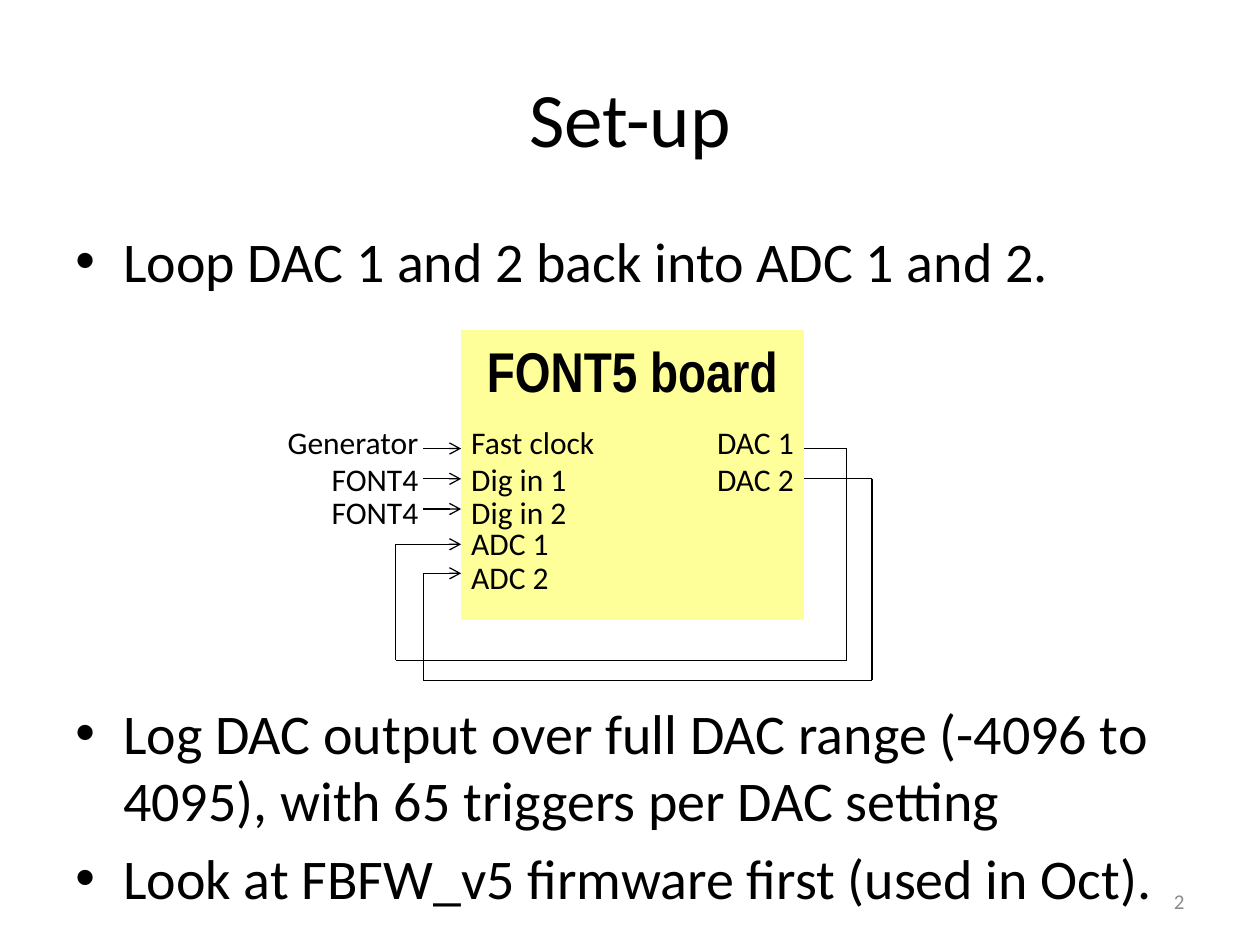
"""Build the set-up slide with a board whose two DAC outputs loop back to its ADC inputs."""
import itertools
from dataclasses import dataclass

import lxml.etree
import pptx
import pptx.dml.color
import pptx.enum.shapes
import pptx.enum.text
import pptx.oxml.ns
import pptx.util

Inches = pptx.util.Inches
Pt = pptx.util.Pt
qn = pptx.oxml.ns.qn
ALIGN = pptx.enum.text.PP_ALIGN
ANCHOR = pptx.enum.text.MSO_ANCHOR


@dataclass(frozen=True)
class Theme:
    """Fonts, colours and type sizes of the slide."""
    font: str = "Calibri"
    board_font: str = "Arial Narrow"
    ink: str = "000000"
    muted: str = "8C8C8C"
    board: str = "FFFF99"
    title: int = 44
    body: int = 32
    label: int = 18
    number: int = 12
    wire: float = 0.75


def rgb(value):
    """Turn a hex string into a colour."""
    return pptx.dml.color.RGBColor.from_string(value)


def apply(target, formats):
    """Set every attribute named in a dict."""
    for name, value in formats.items():
        setattr(target, name, value)


class SlideBuilder:
    """Hold the theme and the current slide, and draw each kind of element."""

    def __init__(self, slide, theme):
        """Keep the slide and theme."""
        self.slide = slide
        self.theme = theme

    def run(self, p, text, size, **font):
        """Add one styled run to a paragraph."""
        r = p.add_run()
        r.text = text
        color = font.pop("color", self.theme.ink)
        apply(r.font, {"name": self.theme.font, "size": Pt(size), **font})
        r.font.color.rgb = rgb(color)

    def text(self, box, text, size, align=ALIGN.LEFT, frame=None, **font):
        """Add a text box with one paragraph."""
        sp = self.slide.shapes.add_textbox(*map(Inches, box))
        tf = sp.text_frame
        apply(tf, {"word_wrap": True, **(frame or {})})
        p = tf.paragraphs[0]
        p.alignment = align
        self.run(p, text, size, **font)

    def label(self, left, top, width, text, align=ALIGN.LEFT):
        """Add a pin or source label."""
        insets = {"margin_left": Inches(0.08), "margin_right": Inches(0.08),
                  "margin_top": Inches(0.03), "margin_bottom": 0}
        self.text((left, top, width, 0.33), text, self.theme.label, align, insets)

    def board(self, box, text):
        """Add the filled board with its name at the top."""
        sp = self.slide.shapes.add_shape(
            pptx.enum.shapes.MSO_SHAPE.RECTANGLE, *map(Inches, box))
        sp.shadow.inherit = False
        sp.fill.solid()
        sp.fill.fore_color.rgb = rgb(self.theme.board)
        sp.line.fill.background()
        tf = sp.text_frame
        apply(tf, {"word_wrap": False, "vertical_anchor": ANCHOR.TOP})
        p = tf.paragraphs[0]
        p.alignment = ALIGN.CENTER
        self.run(p, text, self.theme.body, name=self.theme.board_font, bold=True)

    def wire(self, *points):
        """Join points with straight lines and put an arrowhead on the last."""
        for start, end in itertools.pairwise(points):
            line = self.slide.shapes.add_connector(
                pptx.enum.shapes.MSO_CONNECTOR.STRAIGHT, *map(Inches, start + end))
            line.line.color.rgb = rgb(self.theme.ink)
            line.line.width = Pt(self.theme.wire)
            sp_pr = line._element.spPr
            if end == points[-1]:
                lxml.etree.SubElement(sp_pr.find(qn("a:ln")), qn("a:tailEnd"), type="arrow")
            lxml.etree.SubElement(sp_pr, qn("a:effectLst"))

    def bullets(self, box, items):
        """Add bullets from pairs of text and space before in points."""
        sp = self.slide.shapes.add_textbox(*map(Inches, box))
        tf = sp.text_frame
        tf.word_wrap = True
        for i, (text, space) in enumerate(items):
            p = tf.add_paragraph() if i else tf.paragraphs[0]
            p.space_before = Pt(space)
            p_pr = p._p.get_or_add_pPr()
            p_pr.set("marL", str(Inches(0.38)))
            p_pr.set("indent", str(-Inches(0.38)))
            lxml.etree.SubElement(p_pr, qn("a:buFont"), typeface="Arial")
            lxml.etree.SubElement(p_pr, qn("a:buChar"), char="•")
            self.run(p, text, self.theme.body)


def main():
    """Create the presentation and save it."""
    prs = pptx.Presentation()
    prs.slide_width, prs.slide_height = Inches(10), Inches(7.5)
    theme = Theme()
    s = SlideBuilder(prs.slides.add_slide(prs.slide_layouts[6]), theme)
    middle = {"vertical_anchor": ANCHOR.MIDDLE}

    s.text((0.5, 0.3, 9, 1.25), "Set-up", theme.title, ALIGN.CENTER, middle)

    left, width = 3.66, 2.72
    right = left + width
    s.board((left, 2.62, width, 2.3), "FONT5 board")

    rows = [3.33, 3.62, 3.88, 4.13, 4.4]
    pins = ["Fast clock", "Dig in 1", "Dig in 2", "ADC 1", "ADC 2"]
    for top, pin in zip(rows, pins):
        s.label(left, top, 1.78, pin)
    for top, pin in zip(rows, ["DAC 1", "DAC 2"]):
        s.label(right - 1.78, top, 1.78, pin, ALIGN.RIGHT)
    for top, source in zip(rows, ["Generator", "FONT4", "FONT4"]):
        s.label(2.09, top, 1.31, source, ALIGN.RIGHT)

    for y in (3.56, 3.8, 4.04):
        s.wire((left - 0.3, y), (left, y))
    loops = [(3.56, 6.72, 5.24, 3.14, 4.32), (3.8, 6.92, 5.4, 3.36, 4.55)]
    for dac, outer, bottom, inner, adc in loops:
        s.wire((right, dac), (outer, dac), (outer, bottom),
               (inner, bottom), (inner, adc), (left, adc))

    s.bullets((0.5, 1.75, 9, 5.75), [
        ("Loop DAC 1 and 2 back into ADC 1 and 2.", 0),
        ("Log DAC output over full DAC range (-4096 to 4095), "
         "with 65 triggers per DAC setting", 231),
        ("Look at FBFW_v5 firmware first (used in Oct).", 6.4),
    ])
    s.text((7.17, 6.95, 2.33, 0.4), "2", theme.number, ALIGN.RIGHT, middle,
           color=theme.muted)

    prs.save("out.pptx")


if __name__ == "__main__":
    main()
